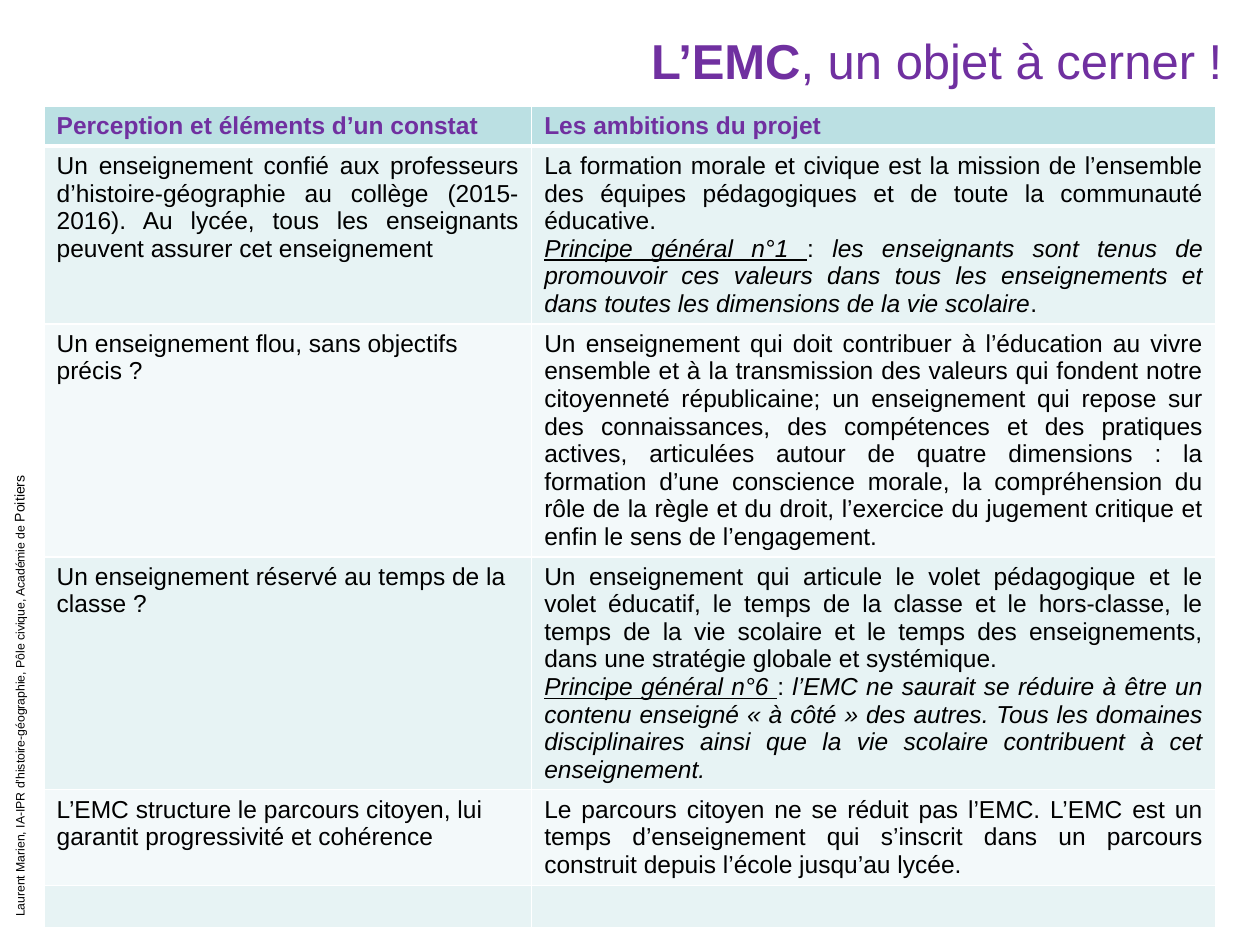
from typing import NamedTuple

from lxml.etree import SubElement
from pptx import Presentation
from pptx.dml.color import RGBColor
from pptx.enum.text import MSO_ANCHOR as Anchor, MSO_AUTO_SIZE as Fit, PP_ALIGN as Align
from pptx.oxml import parse_xml
from pptx.oxml.ns import nsdecls, qn
from pptx.util import Inches, Pt

PURPLE = RGBColor(0x70, 0x30, 0xA0)
BLACK = RGBColor(0x00, 0x00, 0x00)
WHITE = RGBColor(0xFF, 0xFF, 0xFF)
HEAD = RGBColor(0xBB, 0xE0, 0xE3)
BANDS = (RGBColor(0xF3, 0xF9, 0xFA), RGBColor(0xE7, 0xF3, 0xF4))
FONT = "Arial"
SIZE = 14


class Bit(NamedTuple):
    text: str
    size: float = SIZE
    color: RGBColor = BLACK
    bold: bool = False
    ital: bool = False
    line: bool = False


class Para(NamedTuple):
    bits: list[Bit]
    align: Align = Align.LEFT


class Row(NamedTuple):
    height: float
    left: list[Para]
    right: list[Para]


def plain(text: str) -> Para:
    return Para([Bit(text)])


def just(text: str) -> Para:
    return Para([Bit(text)], Align.JUSTIFY)


def head(text: str) -> Para:
    return Para([Bit(text, color=PURPLE, bold=True)])


def rule(num: int, text: str, end: str = "") -> Para:
    bits = [Bit(f"Principe général n°{num} ", ital=True, line=True), Bit(": "),
            Bit(text, ital=True)]
    return Para(bits + ([Bit(end)] if end else []), Align.JUSTIFY)


ROWS = [
    Row(0.31, [head("Perception et éléments d’un constat")],
        [head("Les ambitions du projet")]),
    Row(1.41,
        [just("Un enseignement confié aux professeurs d’histoire-géographie au collège "
              "(2015-2016). Au lycée, tous les enseignants peuvent assurer cet "
              "enseignement")],
        [just("La formation morale et civique est la mission de l’ensemble des équipes "
              "pédagogiques et de toute la communauté éducative."),
         rule(1, "les enseignants sont tenus de promouvoir ces valeurs dans tous les "
                 "enseignements et dans toutes les dimensions de la vie scolaire", ".")]),
    Row(1.84, [plain("Un enseignement flou, sans objectifs précis ?")],
        [just("Un enseignement qui doit contribuer à l’éducation au vivre ensemble et à "
              "la transmission des valeurs qui fondent notre citoyenneté républicaine; "
              "un enseignement qui repose sur des connaissances, des compétences et des "
              "pratiques actives, articulées autour de quatre dimensions : la formation "
              "d’une conscience morale, la compréhension du rôle de la règle et du "
              "droit, l’exercice du jugement critique et enfin le sens de "
              "l’engagement.")]),
    Row(1.84, [plain("Un enseignement réservé au temps de la classe ?")],
        [just("Un enseignement qui articule le volet pédagogique et le volet éducatif, "
              "le temps de la classe et le hors-classe, le temps de la vie scolaire et "
              "le temps des enseignements, dans une stratégie globale et systémique."),
         rule(6, "l’EMC ne saurait se réduire à être un contenu enseigné « à côté » des "
                 "autres. Tous les domaines disciplinaires ainsi que la vie scolaire "
                 "contribuent à cet enseignement.")]),
    Row(0.76,
        [plain("L’EMC structure le parcours citoyen, lui garantit progressivité et "
               "cohérence")],
        [just("Le parcours citoyen ne se réduit pas l’EMC. L’EMC est un temps "
              "d’enseignement qui s’inscrit dans un parcours construit depuis l’école "
              "jusqu’au lycée.")]),
    Row(0.31, [], []),
]
COLS = (3.87, 5.43)


def write(frame, paras: list[Para]) -> None:
    for i, para in enumerate(paras):
        p = frame.add_paragraph() if i else frame.paragraphs[0]
        p.alignment = para.align
        for bit in para.bits:
            run = p.add_run()
            run.text = bit.text
            font = run.font
            font.name, font.size = FONT, Pt(bit.size)
            font.bold, font.italic, font.underline = bit.bold, bit.ital, bit.line
            font.color.rgb = bit.color


def edge(cell, top: float, base: float) -> None:
    props = cell._tc.get_or_add_tcPr()
    sides = {"lnL": 1, "lnR": 1, "lnT": top, "lnB": base}
    for i, (side, width) in enumerate(sides.items()):
        props.insert(i, parse_xml(
            f'<a:{side} {nsdecls("a")} w="{Pt(width)}"><a:solidFill>'
            f'<a:srgbClr val="{WHITE}"/></a:solidFill></a:{side}>'))


def draw_grid(slide) -> None:
    high = sum(row.height for row in ROWS)
    grid = slide.shapes.add_table(len(ROWS), len(COLS), Inches(0.35), Inches(0.84),
                                  Inches(sum(COLS)), Inches(high)).table
    for col, width in zip(grid.columns, COLS):
        col.width = Inches(width)
    for r, row in enumerate(ROWS):
        grid.rows[r].height = Inches(row.height)
        for c, paras in enumerate((row.left, row.right)):
            cell = grid.cell(r, c)
            cell.fill.solid()
            cell.fill.fore_color.rgb = BANDS[r % 2] if r else HEAD
            edge(cell, 3 if r == 1 else 1, 1 if r else 3)
            write(cell.text_frame, paras)
            if not paras:
                end = SubElement(cell.text_frame.paragraphs[0]._p, qn("a:endParaRPr"))
                end.set("sz", str(SIZE * 100))


def draw_title(slide) -> None:
    title = slide.shapes.title
    title.left, title.top = Inches(0.8), Inches(0.13)
    title.width, title.height = Inches(9), Inches(0.69)
    title.text_frame.vertical_anchor = Anchor.MIDDLE
    write(title.text_frame, [Para([Bit("L’EMC", 28, PURPLE, True),
                                   Bit(", un objet à cerner !", 28, PURPLE)],
                                  Align.RIGHT)])


def draw_credit(slide) -> None:
    box = slide.shapes.add_textbox(Inches(-2.6), Inches(4.5), Inches(5.51), Inches(0.24))
    box.rotation = 270
    box.text_frame.word_wrap = True
    box.text_frame.auto_size = Fit.SHAPE_TO_FIT_TEXT
    write(box.text_frame, [Para([
        Bit("Laurent Marien, IA-IPR d’histoire-géographie, Pôle civique, Académie de ", 7),
        Bit("Poitiers", 8)])])


def main() -> None:
    deck = Presentation()
    deck.slide_width, deck.slide_height = Inches(10), Inches(7.5)
    slide = deck.slides.add_slide(deck.slide_layouts[5])
    draw_title(slide)
    draw_grid(slide)
    draw_credit(slide)
    deck.save("out.pptx")


if __name__ == "__main__":
    main()
